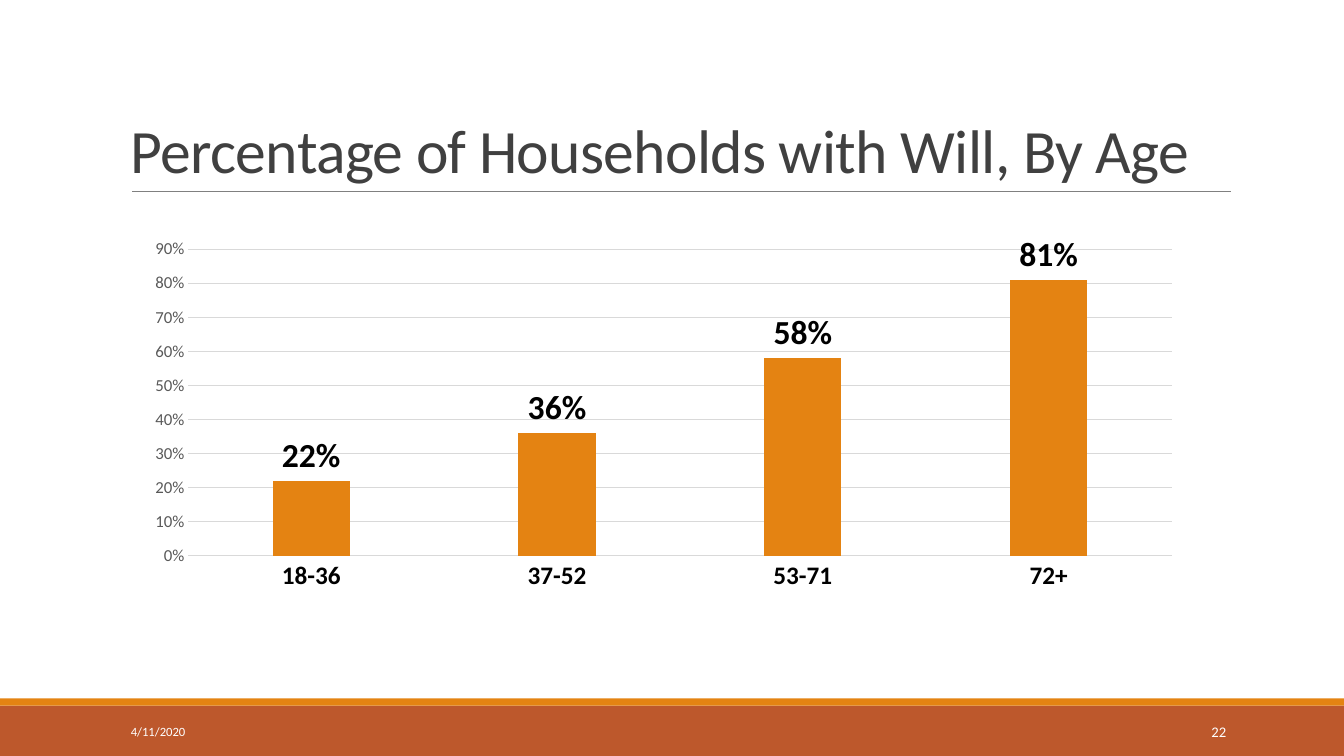
import pptx
import pptx.util
import pptx.chart.data
import pptx.dml.color
import pptx.enum.chart
import pptx.enum.shapes
import pptx.enum.text
import pptx.oxml.ns
import lxml.etree

Inches = pptx.util.Inches
Pt = pptx.util.Pt
ALIGN = pptx.enum.text.PP_ALIGN
ANCHOR = pptx.enum.text.MSO_ANCHOR
FACE = "Calibri"
ORANGE = "E48312"
GRID = "D9D9D9"


def color(code):
    return pptx.dml.color.RGBColor.from_string(code)


def style(font, size, code, bold=False):
    font.name = FACE
    font.size = Pt(size)
    font.bold = bold
    font.color.rgb = color(code)


def stroke(line, code, width):
    line.color.rgb = color(code)
    line.width = Pt(width)


def add_text(slide, box, text, size, code, anchor=ANCHOR.MIDDLE, align=ALIGN.LEFT):
    frame = slide.shapes.add_textbox(*map(Inches, box)).text_frame
    frame.word_wrap = True
    frame.vertical_anchor = anchor
    para = frame.paragraphs[0]
    para.alignment = align
    run = para.add_run()
    run.text = text
    style(run.font, size, code)
    return para, run


def add_band(slide, box, code):
    band = slide.shapes.add_shape(
        pptx.enum.shapes.MSO_SHAPE.RECTANGLE, *map(Inches, box))
    band.shadow.inherit = False
    band.fill.solid()
    band.fill.fore_color.rgb = color(code)
    band.line.fill.background()


def add_title(slide, left, top, width, height):
    para, run = add_text(slide, (left, top, width, height),
                         "Percentage of Households with Will, By Age",
                         44, "404040", ANCHOR.BOTTOM)
    para.line_spacing = 0.85
    run._r.get_or_add_rPr().set("spc", "-50")

    # Rule along the bottom of the title
    start, base = left + 0.11, top + height
    rule = slide.shapes.add_connector(
        pptx.enum.shapes.MSO_CONNECTOR.STRAIGHT,
        *map(Inches, (start, base, start + 10.9, base)))
    stroke(rule.line, "808080", 0.5)
    lxml.etree.SubElement(rule._element.spPr, pptx.oxml.ns.qn("a:effectLst"))


def add_bars(slide, left, top, width, height):
    data = pptx.chart.data.CategoryChartData(number_format="0%")
    data.categories = ["18-36", "37-52", "53-71", "72+"]
    data.add_series("Series 1", [0.22, 0.36, 0.58, 0.81])
    chart = slide.shapes.add_chart(
        pptx.enum.chart.XL_CHART_TYPE.COLUMN_CLUSTERED,
        *map(Inches, (left, top, width, height)), data).chart
    chart.has_title = False
    chart.has_legend = False
    style(chart.font, 10, "000000")

    # Bars and their labels
    plot = chart.plots[0]
    plot.vary_by_categories = False
    plot.gap_width = 219
    plot.overlap = -27
    bars = plot.series[0]
    bars.format.fill.solid()
    bars.format.fill.fore_color.rgb = color(ORANGE)
    labels = bars.data_labels
    labels.show_value = True
    labels.position = pptx.enum.chart.XL_LABEL_POSITION.OUTSIDE_END
    labels.number_format = "0%"
    labels.number_format_is_linked = False
    style(labels.font, 24, "000000", True)

    # Axes
    ages, shares = chart.category_axis, chart.value_axis
    for axis in (ages, shares):
        axis.major_tick_mark = pptx.enum.chart.XL_TICK_MARK.NONE
        axis.minor_tick_mark = pptx.enum.chart.XL_TICK_MARK.NONE
    style(ages.tick_labels.font, 18, "000000", True)
    stroke(ages.format.line, GRID, 0.75)
    style(shares.tick_labels.font, 12, "595959")
    shares.tick_labels.number_format = "0%"
    shares.tick_labels.number_format_is_linked = False
    shares.minimum_scale = 0
    shares.maximum_scale = 0.9
    shares.major_unit = 0.1
    shares.format.line.fill.background()
    shares.has_major_gridlines = True
    stroke(shares.major_gridlines.format.line, GRID, 0.75)


def add_footer(slide, left, top, width, height):
    add_band(slide, (left, top, width, height), "BD582C")
    add_band(slide, (left, top - 0.07, width, 0.07), ORANGE)
    row = top + 0.06
    add_text(slide, (left + 1.2, row, 2.7, 0.4), "4/11/2020", 9, "FFFFFF")
    add_text(slide, (left + 10.83, row, 1.43, 0.4), "22", 10.5, "FFFFFF",
             align=ALIGN.RIGHT)


def main():
    deck = pptx.Presentation()
    deck.slide_width = Inches(13.33)
    deck.slide_height = Inches(7.5)
    slide = deck.slides.add_slide(deck.slide_layouts[6])
    add_title(slide, 1.2, 0.31, 11, 1.59)
    add_bars(slide, 1.33, 2.3, 10.5, 3.63)
    add_footer(slide, 0, 7, 13.33, 0.5)
    deck.save("out.pptx")


if __name__ == "__main__":
    main()
